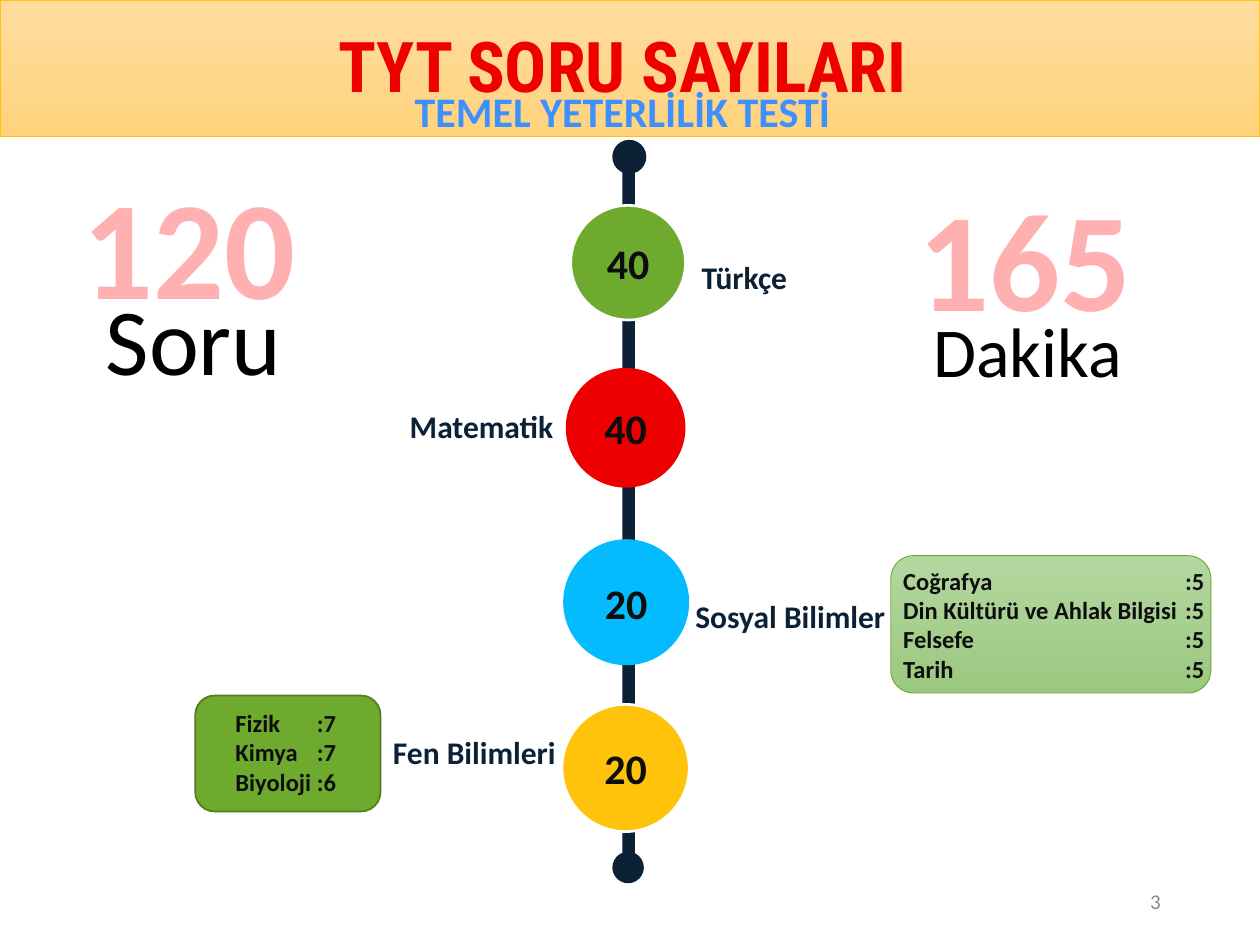
"""Build the TYT question count slide with a vertical subject timeline."""
from lxml import etree
from pptx import Presentation
from pptx import util as u
from pptx.dml.color import RGBColor
from pptx.enum import shapes, text
from pptx.oxml.ns import qn

THEME = {
    "navy": "0C2036", "ink": "0D0D0D", "black": "000000", "white": "FFFFFF",
    "red": "EF0000", "pink": "FFB1B1", "blue": "3F90FF", "sky": "05BBFF",
    "green": "6DAA2D", "dark_green": "517E21", "gold": "FFC30B", "gray": "8C8C8C",
    "header": ("FFDD9F", "FFD37D"), "panel": ("B4D7A0", "9BC87F"),
    "body": "Calibri", "display": "Roboto Condensed",
    "huge": 80, "unit": 54, "title": 40, "count": 24, "label": 18, "detail": 14, "small": 12,
}
LEFT, CENTER, RIGHT = text.PP_ALIGN.LEFT, text.PP_ALIGN.CENTER, text.PP_ALIGN.RIGHT
TOP, MIDDLE = text.MSO_ANCHOR.TOP, text.MSO_ANCHOR.MIDDLE
RECT, OVAL = shapes.MSO_SHAPE.RECTANGLE, shapes.MSO_SHAPE.OVAL
ROUND = shapes.MSO_SHAPE.ROUNDED_RECTANGLE

prs = Presentation()
prs.slide_width, prs.slide_height = u.Inches(10), u.Inches(7.5)
s = prs.slides.add_slide(prs.slide_layouts[6])


def add_shape(kind, box, fill, line=None, width=0.5):
    sp = s.shapes.add_shape(kind, *map(u.Inches, box))
    sp.shadow.inherit = False
    if isinstance(THEME[fill], tuple):
        sp.fill.gradient()
        sp.fill.gradient_angle = 270
        for stop, color in zip(sp.fill.gradient_stops, THEME[fill]):
            stop.color.rgb = RGBColor.from_string(color)
    else:
        sp.fill.solid()
        sp.fill.fore_color.rgb = RGBColor.from_string(THEME[fill])
    if line:
        sp.line.color.rgb = RGBColor.from_string(THEME[line])
        sp.line.width = u.Pt(width)
    else:
        sp.line.fill.background()
    return sp


def write(target, lines, size, color, bold=True, align=LEFT, anchor=TOP, font="body", tab=None):
    sp = target
    if isinstance(target, tuple):
        sp = s.shapes.add_textbox(*map(u.Inches, target))
    tf = sp.text_frame
    for name, value in {"word_wrap": True, "vertical_anchor": anchor}.items():
        setattr(tf, name, value)
    for i, line in enumerate(lines):
        p = tf.paragraphs[0] if i == 0 else tf.add_paragraph()
        p.alignment = align
        if tab:
            stops = etree.SubElement(p._p.get_or_add_pPr(), qn("a:tabLst"))
            etree.SubElement(stops, qn("a:tab"), pos=str(u.Inches(tab)), algn="r")
        r = p.add_run()
        r.text = line
        style = {"name": THEME[font], "size": u.Pt(THEME[size]), "bold": bold}
        for name, value in style.items():
            setattr(r.font, name, value)
        r.font.color.rgb = RGBColor.from_string(THEME[color])


add_shape(RECT, (0, 0, 10, 1.08), "header", "gold")
write((-0.06, 0.13, 10, 1.18), ["TYT SORU SAYILARI"], "title", "red", align=CENTER, font="display")
write((0.45, 0.63, 8.98, 0.5), ["TEMEL YETERLİLİK TESTİ"], "count", "blue", align=CENTER)

add_shape(RECT, (4.94, 1.34, 0.1, 5.44), "navy")
for top, size in [(1.11, 0.27), (6.76, 0.25)]:
    add_shape(OVAL, (4.86, top, size, size), "navy")

subjects = [
    ("40", (4.53, 1.63, 0.91, 0.91), "green", "white", "Türkçe", (5.47, 2, 1.18, 0.4), LEFT),
    ("40", (4.49, 2.92, 0.95, 0.95), "red", None, "Matematik", (0.45, 3.18, 4.04, 0.4), RIGHT),
    ("20", (4.47, 4.28, 1, 1), "sky", None, "Sosyal Bilimler", (5.42, 4.69, 1.72, 0.4), LEFT),
    ("20", (4.46, 5.59, 1.01, 1.01), "gold", "white", "Fen Bilimleri", (0.47, 5.77, 4.04, 0.4), RIGHT),
]
for count, circle, fill, line, subject, label, align in subjects:
    sp = add_shape(OVAL, circle, fill, line, 1.5)
    write(sp, [count], "count", "ink", align=CENTER, anchor=MIDDLE)
    write(label, [subject], "label", "navy", align=align)

social = [("Coğrafya", 5), ("Din Kültürü ve Ahlak Bilgisi", 5), ("Felsefe", 5), ("Tarih", 5)]
science = [("Fizik", 7), ("Kimya", 7), ("Biyoloji", 6)]
panels = [
    (social, (7.07, 4.41, 2.54, 1.09), "panel", "green", 0.5, (7.07, 4.44, 2.63, 1.04), 2.39),
    (science, (1.55, 5.52, 1.47, 0.92), "green", "dark_green", 1, (1.77, 5.57, 1.25, 0.81), 0.8),
]
for rows, box, fill, line, width, inner, tab in panels:
    add_shape(ROUND, box, fill, line, width)
    write(inner, [f"{name}\t:{count}" for name, count in rows], "detail", "ink", tab=tab)

totals = [
    ("120", (0.56, 1.22, 2.45, 1.45), "Soru", (0.74, 2.18, 1.68, 1.01), "unit"),
    ("165", (7.19, 1.31, 2.61, 1.45), "Dakika", (7.31, 2.39, 1.96, 0.77), "title"),
]
for number, number_box, unit, unit_box, size in totals:
    write(number_box, [number], "huge", "pink")
    write(unit_box, [unit], size, "black", bold=False)

write((7.06, 6.95, 2.25, 0.4), ["3"], "small", "gray", bold=False, align=RIGHT, anchor=MIDDLE)

prs.save("out.pptx")
